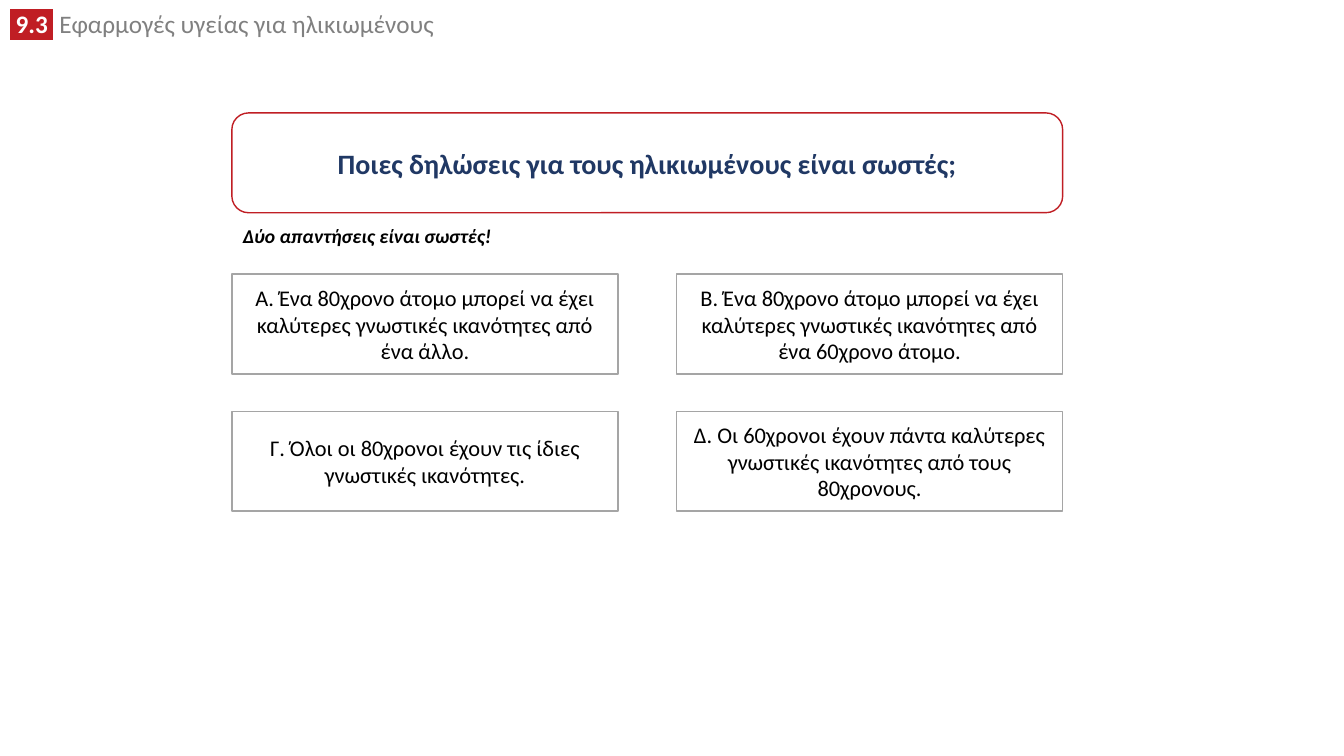
from lxml.etree import SubElement
from pptx import Presentation
from pptx.dml.color import RGBColor
from pptx.enum.shapes import MSO_SHAPE as Kind
from pptx.enum.text import MSO_ANCHOR as Anchor, MSO_AUTO_SIZE as Fit, PP_ALIGN as Align
from pptx.oxml.ns import qn
from pptx.util import Inches, Pt

RED = RGBColor(0xC0, 0x1E, 0x24)
NAVY = RGBColor(0x20, 0x38, 0x64)
GRAY = RGBColor(0x80, 0x80, 0x80)
EDGE = RGBColor(0xA5, 0xA5, 0xA5)
WHITE = RGBColor(0xFF, 0xFF, 0xFF)
BLACK = RGBColor(0, 0, 0)

ANSWERS = [
    "A. Ένα 80χρονο άτομο μπορεί να έχει καλύτερες γνωστικές ικανότητες από ένα άλλο.",
    "B. Ένα 80χρονο άτομο μπορεί να έχει καλύτερες γνωστικές ικανότητες από ένα 60χρονο άτομο.",
    "Γ. Όλοι οι 80χρονοι έχουν τις ίδιες γνωστικές ικανότητες.",
    "Δ. Οι 60χρονοι έχουν πάντα καλύτερες γνωστικές ικανότητες από τους 80χρονους.",
]


def style(para, size, color, bold=False, italic=False):
    font = para.font
    font.name = "Calibri"
    font.size = Pt(size)
    font.bold = bold
    font.italic = italic
    font.color.rgb = color


def add_label(slide, left, top, width, height, wrap):
    label = slide.shapes.add_textbox(Inches(left), Inches(top), Inches(width), Inches(height))
    frame = label.text_frame
    frame.word_wrap = wrap
    frame.auto_size = Fit.SHAPE_TO_FIT_TEXT
    return frame.paragraphs[0]


def add_header(slide, left, top, width, height):
    para = add_label(slide, left, top, width, height, True)
    para.line_spacing = 0.8
    style(para, 18, GRAY)
    number = para.add_run()
    number.text = " 9.3 "
    number.font.bold = True
    number.font.color.rgb = WHITE
    mark = SubElement(number.font._element, qn("a:highlight"))
    SubElement(mark, qn("a:srgbClr"), val=str(RED))
    title = para.add_run()
    title.text = " Εφαρμογές υγείας για ηλικιωμένους"


def add_card(slide, kind, left, top, width, height, text, edge, size, color, bold=False):
    card = slide.shapes.add_shape(kind, Inches(left), Inches(top), Inches(width), Inches(height))
    card.shadow.inherit = False
    card.fill.solid()
    card.fill.fore_color.rgb = WHITE
    card.line.color.rgb = edge
    card.line.width = Pt(1)
    frame = card.text_frame
    frame.word_wrap = True
    frame.vertical_anchor = Anchor.MIDDLE
    para = frame.paragraphs[0]
    para.text = text
    para.alignment = Align.CENTER
    style(para, size, color, bold)


def add_quiz(slide, left, top, width):
    height, card_width, pitch = 0.99, 3.83, 1.36
    add_card(slide, Kind.ROUNDED_RECTANGLE, left, top, width, height,
             "Ποιες δηλώσεις για τους ηλικιωμένους είναι σωστές;", RED, 20, NAVY, True)
    hint = add_label(slide, left + 0.01, top + 1.05, 2.68, 0.34, False)
    hint.text = "Δύο απαντήσεις είναι σωστές!"
    style(hint, 14, BLACK, True, True)
    for index, answer in enumerate(ANSWERS):
        row, col = divmod(index, 2)
        add_card(slide, Kind.RECTANGLE, left + col * (width - card_width),
                 top + 1.6 + row * pitch, card_width, height, answer, EDGE, 16, BLACK)


def main():
    deck = Presentation()
    deck.slide_width = Inches(13.33)
    deck.slide_height = Inches(7.5)
    slide = deck.slides.add_slide(deck.slide_layouts[6])
    add_header(slide, 0, 0.09, 9.52, 0.35)
    add_quiz(slide, 2.3, 1.12, 8.24)
    deck.save("out.pptx")


if __name__ == "__main__":
    main()
